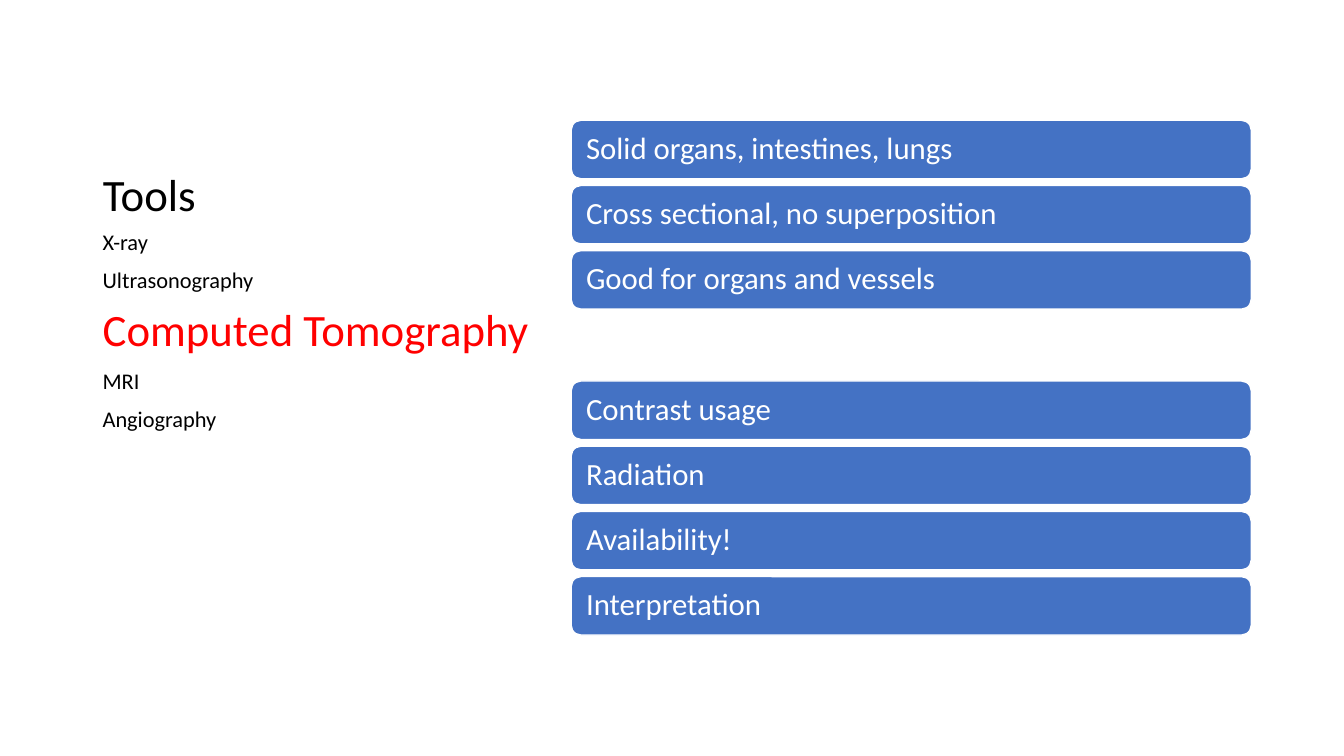
from dataclasses import dataclass

import pptx
import pptx.dml.color
import pptx.enum.shapes
import pptx.enum.text
import pptx.util

EMU_PER_PX = 6096  # 150 px to the inch
FONT_NAME = "Calibri"
BLACK = pptx.dml.color.RGBColor(0x00, 0x00, 0x00)
WHITE = pptx.dml.color.RGBColor(0xFF, 0xFF, 0xFF)
RED = pptx.dml.color.RGBColor(0xFF, 0x00, 0x00)
BLUE = pptx.dml.color.RGBColor(0x44, 0x72, 0xC4)

BAR_LEFT, BAR_TOP, BAR_WIDTH, BAR_HEIGHT = 850, 179, 1012, 87
BAR_PITCH = 97
BAR_INSET = 18


@dataclass(frozen=True)
class Tool:
    name: str
    size: int = 16
    color: pptx.dml.color.RGBColor = BLACK


@dataclass(frozen=True)
class Bar:
    slot: int
    text: str


TOOLS = [
    Tool("X-ray"),
    Tool("Ultrasonography"),
    Tool("Computed Tomography", 32, RED),
    Tool("MRI"),
    Tool("Angiography"),
]

# Slot 3 stays free between the strengths and the considerations
BARS = [
    Bar(0, "Solid organs, intestines, lungs"),
    Bar(1, "Cross sectional, no superposition"),
    Bar(2, "Good for organs and vessels"),
    Bar(4, "Contrast usage"),
    Bar(5, "Radiation"),
    Bar(6, "Availability!"),
    Bar(7, "Interpretation"),
]


def px(length: int) -> pptx.util.Emu:
    return pptx.util.Emu(length * EMU_PER_PX)


def write_paragraph(paragraph, text: str, size: int, color: pptx.dml.color.RGBColor) -> None:
    paragraph.text = text
    paragraph.alignment = pptx.enum.text.PP_ALIGN.LEFT
    paragraph.line_spacing = 0.9
    paragraph.font.name = FONT_NAME
    paragraph.font.size = pptx.util.Pt(size)
    paragraph.font.color.rgb = color


def format_title(slide) -> None:
    title = slide.shapes.title
    title.left, title.top, title.width, title.height = px(138), px(75), px(645), px(262)
    frame = title.text_frame
    frame.auto_size = pptx.enum.text.MSO_AUTO_SIZE.NONE
    frame.vertical_anchor = pptx.enum.text.MSO_ANCHOR.BOTTOM
    write_paragraph(frame.paragraphs[0], "Tools", 32, BLACK)


def add_tool_list(slide, tools: list[Tool]) -> None:
    frame = slide.shapes.add_textbox(px(138), px(337), px(694), px(626)).text_frame
    frame.word_wrap = True
    for index, tool in enumerate(tools):
        paragraph = frame.add_paragraph() if index else frame.paragraphs[0]
        write_paragraph(paragraph, tool.name, tool.size, tool.color)
        if index:
            paragraph.space_before = pptx.util.Pt(10)


def add_bar(slide, bar: Bar) -> None:
    shape = slide.shapes.add_shape(
        pptx.enum.shapes.MSO_SHAPE.ROUNDED_RECTANGLE,
        px(BAR_LEFT), px(BAR_TOP + bar.slot * BAR_PITCH), px(BAR_WIDTH), px(BAR_HEIGHT),
    )
    shape.shadow.inherit = False
    shape.fill.solid()
    shape.fill.fore_color.rgb = BLUE
    shape.line.color.rgb = WHITE
    shape.line.width = pptx.util.Pt(1)
    frame = shape.text_frame
    frame.word_wrap = True
    frame.margin_left = frame.margin_right = px(BAR_INSET)
    frame.margin_top = frame.margin_bottom = px(BAR_INSET)
    frame.vertical_anchor = pptx.enum.text.MSO_ANCHOR.MIDDLE
    write_paragraph(frame.paragraphs[0], bar.text, 22, WHITE)


def main() -> None:
    presentation = pptx.Presentation()
    presentation.slide_width, presentation.slide_height = px(2000), px(1125)
    title_only = presentation.slide_layouts.get_by_name("Title Only")
    slide = presentation.slides.add_slide(title_only)

    # Title and list of tools on the left
    format_title(slide)
    add_tool_list(slide, TOOLS)

    # Bars on the right
    for bar in BARS:
        add_bar(slide, bar)

    presentation.save("out.pptx")


if __name__ == "__main__":
    main()
